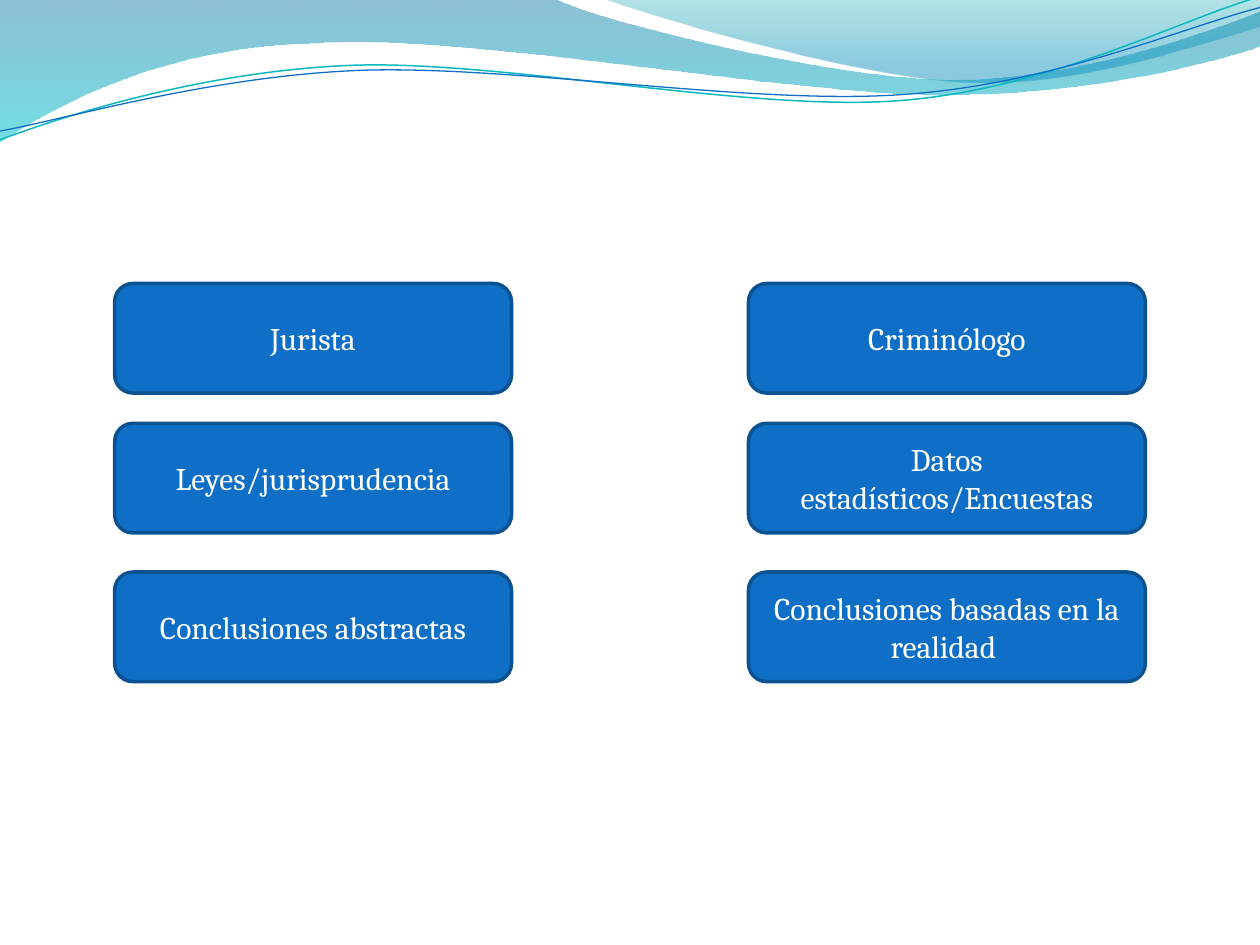
from lxml.etree import SubElement
from pptx import Presentation
from pptx.dml.color import RGBColor
from pptx.enum.shapes import MSO_SHAPE as Shape
from pptx.enum.text import MSO_ANCHOR as Anchor, PP_ALIGN as Align
from pptx.oxml.ns import qn
from pptx.util import Inches, Pt

WHITE = RGBColor(0xFF, 0xFF, 0xFF)
BLUE = RGBColor(0x0F, 0x6F, 0xC6)
DARK_BLUE = RGBColor(0x0B, 0x52, 0x92)
TEAL = RGBColor(0x0A, 0xB8, 0xBF)
WAVE_BLUE = RGBColor(0x00, 0x74, 0xA1)
WAVE_CYAN = RGBColor(0x00, 0xC6, 0xCF)
CREST_TEAL = RGBColor(0x00, 0xA1, 0xA9)
CREST_BLUE = RGBColor(0x00, 0x8B, 0xBF)

COLUMN_LEFTS = (0.91, 5.94)
ROWS = (
    (2.25, ("Jurista", "Criminólogo")),
    (3.36, ("Leyes/jurisprudencia", "Datos estadísticos/Encuestas")),
    (4.54, ("Conclusiones abstractas", "Conclusiones basadas en la realidad ")),
)

WAVE = [
    (0, 0), (4.4, -0.01),
    (4.76, 0.17, 6.64, 0.63, 7.58, 0.63), (8.53, 0.63, 9.58, 0.26, 10, 0.09),
    (10.01, 0.36),
    (9.83, 0.44, 8.7, 0.76, 7.46, 0.75), (6.22, 0.75, 3.82, 0.28, 2.57, 0.34),
    (1.29, 0.36, 0.46, 0.83, -0.01, 1.13),
]
CREST = [
    (4.79, -0.01),
    (5.09, 0.11, 6.82, 0.62, 7.69, 0.65), (8.56, 0.69, 9.61, 0.32, 10, 0.21),
    (10, 0),
]
TEAL_LINE = [
    (0, 1.11),
    (0.48, 0.93, 1.58, 0.57, 2.77, 0.52), (3.95, 0.47, 5.93, 0.89, 7.13, 0.8),
    (8.33, 0.71, 9.38, 0.15, 9.98, -0.02),
]
BLUE_LINE = [
    (0, 1.04),
    (0.47, 0.96, 1.64, 0.61, 2.83, 0.56), (4.03, 0.51, 5.97, 0.84, 7.17, 0.75),
    (8.36, 0.67, 9.41, 0.21, 10, 0.06),
]


def bend_segment(shape, line, segment):
    """Replace a straight segment with a cubic curve."""
    curve = line.getparent().makeelement(qn("a:cubicBezTo"))
    for x, y in zip(segment[::2], segment[1::2]):
        SubElement(curve, qn("a:pt"), x=str(Inches(x) - shape.left),
                   y=str(Inches(y) - shape.top))
    line.getparent().replace(line, curve)


def add_outline(slide, path, close):
    """Add a freeform of lines and curves given in inches."""
    points = [(Inches(segment[-2]), Inches(segment[-1])) for segment in path]
    builder = slide.shapes.build_freeform(*points[0])
    builder.add_line_segments(points[1:], close=close)
    shape = builder.convert_to_shape()
    shape.shadow.inherit = False
    for line, segment in zip(list(shape.element.iter(qn("a:lnTo"))), path[1:]):
        if len(segment) == 6:
            bend_segment(shape, line, segment)
    return shape


def add_gradient_wave(slide, path, stops):
    """Add a closed wave with a translucent top-to-bottom gradient."""
    shape = add_outline(slide, path, True)
    shape.line.fill.background()
    shape.fill.gradient()
    shape.fill.gradient_angle = 270
    for stop, (position, color, _) in zip(shape.fill.gradient_stops, stops):
        stop.position = position
        stop.color.rgb = color
    for element, (_, _, opacity) in zip(shape.element.iter(qn("a:gs")), stops):
        SubElement(element[0], qn("a:alpha"), val=str(opacity * 1000))


def add_wave_line(slide, path, color, width):
    """Add an open curved line."""
    shape = add_outline(slide, path, False)
    shape.fill.background()
    shape.line.color.rgb = color
    shape.line.width = Pt(width)


def add_box(slide, left, top, text):
    """Add a rounded box with centred text."""
    shape = slide.shapes.add_shape(
        Shape.ROUNDED_RECTANGLE, Inches(left), Inches(top), Inches(3.15), Inches(0.87))
    shape.shadow.inherit = False
    shape.fill.solid()
    shape.fill.fore_color.rgb = BLUE
    shape.line.color.rgb = DARK_BLUE
    shape.line.width = Pt(2)
    text_frame = shape.text_frame
    text_frame.word_wrap = True
    text_frame.vertical_anchor = Anchor.MIDDLE
    text_frame.text = text
    paragraph = text_frame.paragraphs[0]
    paragraph.alignment = Align.CENTER
    font = paragraph.runs[0].font
    font.name = "Cambria"
    font.size = Pt(18)
    font.color.rgb = WHITE


def main():
    """Build and save the slide."""
    presentation = Presentation()
    presentation.slide_width = Inches(10)
    presentation.slide_height = Inches(7.5)
    slide = presentation.slides.add_slide(presentation.slide_layouts[6])
    add_gradient_wave(slide, WAVE, ((0, WAVE_BLUE, 45), (1, WAVE_CYAN, 55)))
    add_gradient_wave(slide, CREST, ((0, CREST_TEAL, 30), (0.8, CREST_BLUE, 45)))
    add_wave_line(slide, TEAL_LINE, TEAL, 0.85)
    add_wave_line(slide, BLUE_LINE, BLUE, 0.75)
    for top, texts in ROWS:
        for left, text in zip(COLUMN_LEFTS, texts):
            add_box(slide, left, top, text)
    presentation.save("out.pptx")


if __name__ == "__main__":
    main()
